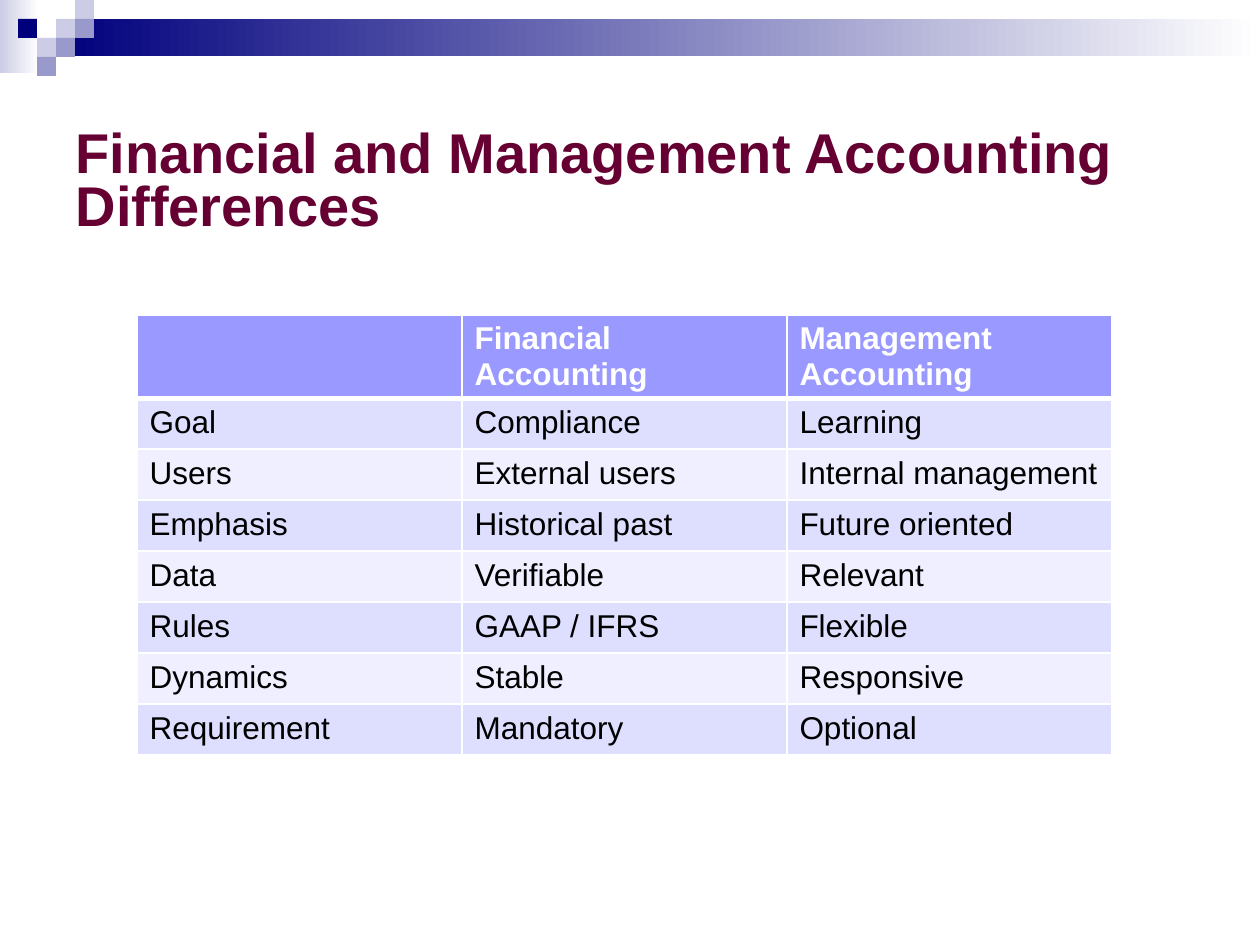
import pptx
import pptx.util
import pptx.dml.color
import pptx.enum.shapes
import pptx.enum.text
import pptx.oxml
import pptx.oxml.ns

RGB = pptx.dml.color.RGBColor
NAVY = RGB(0x00, 0x00, 0x7D)
LAVENDER = RGB(0xCC, 0xCC, 0xE6)
PERIWINKLE = RGB(0x99, 0x99, 0xCC)
WHITE = RGB(0xFF, 0xFF, 0xFF)
BLACK = RGB(0x00, 0x00, 0x00)
MAROON = RGB(0x66, 0x00, 0x33)
HEADER = RGB(0x99, 0x99, 0xFF)
BAND_DARK = RGB(0xDE, 0xDE, 0xFF)
BAND_LIGHT = RGB(0xEF, 0xEF, 0xFF)

PX = 914400 / 126
FONT = "Arial"


def box(left, top, width, height, color, fade=False):
    """Add a borderless rectangle, solid or fading to white on the right."""
    lengths = [round(n * PX) for n in (left, top, width, height)]
    sp = s.shapes.add_shape(pptx.enum.shapes.MSO_SHAPE.RECTANGLE, *lengths)
    sp.shadow.inherit = False
    sp.line.fill.background()
    if fade:
        sp.fill.gradient()
        sp.fill.gradient_angle = 0
        for stop, stop_color in zip(sp.fill.gradient_stops, (color, WHITE)):
            stop.color.rgb = stop_color
    else:
        sp.fill.solid()
        sp.fill.fore_color.rgb = color


def set_borders(cell, bottom_width):
    tcPr = cell._tc.get_or_add_tcPr()
    for i, side in enumerate("LRTB"):
        width = pptx.util.Pt(bottom_width if side == "B" else 1)
        tcPr.insert(i, pptx.oxml.parse_xml(
            f'<a:ln{side} {pptx.oxml.ns.nsdecls("a")} w="{width}"><a:solidFill>'
            f'<a:srgbClr val="{WHITE}"/></a:solidFill></a:ln{side}>'))


prs = pptx.Presentation()
prs.slide_width = round(1260 * PX)
prs.slide_height = round(945 * PX)
s = prs.slides.add_slide(prs.slide_layouts[5])

# Top band and its mosaic of squares
box(0, 0, 39, 73, LAVENDER, fade=True)
box(57, 19, 1203, 37, NAVY, fade=True)
SQUARE = 19
mosaic = [
    (3, 1, LAVENDER), (4, 0, LAVENDER), (4, 1, PERIWINKLE),
    (2, 2, LAVENDER), (1, 1, NAVY), (3, 2, PERIWINKLE), (2, 3, PERIWINKLE),
]
for col, row, color in mosaic:
    box(col * SQUARE - 1, row * SQUARE, SQUARE, SQUARE, color)

# Title
title = s.shapes.title
title.left, title.top = round(63 * PX), round(116 * PX)
title.width, title.height = round(1134 * PX), round(136 * PX)
tf = title.text_frame
tf.text = "Financial and Management Accounting Differences"
tf.word_wrap = True
tf.auto_size = pptx.enum.text.MSO_AUTO_SIZE.NONE
tf.vertical_anchor = pptx.enum.text.MSO_ANCHOR.MIDDLE
p = tf.paragraphs[0]
p.alignment = pptx.enum.text.PP_ALIGN.LEFT
p.line_spacing = 0.8
r = p.runs[0]
r.font.name = FONT
r.font.size = pptx.util.Pt(32)
r.font.bold = True
r.font.color.rgb = MAROON

# Comparison table
rows = [
    ("", "Financial Accounting", "Management Accounting"),
    ("Goal", "Compliance", "Learning"),
    ("Users", "External users", "Internal management"),
    ("Emphasis", "Historical past", "Future oriented"),
    ("Data", "Verifiable", "Relevant"),
    ("Rules", "GAAP / IFRS", "Flexible"),
    ("Dynamics", "Stable", "Responsive"),
    ("Requirement", "Mandatory", "Optional"),
]
COL_WIDTH, ROW_HEIGHT = 325, 51
table = s.shapes.add_table(
    len(rows), 3, round(137 * PX), round(315 * PX),
    round(3 * COL_WIDTH * PX), round(len(rows) * ROW_HEIGHT * PX)).table
for i, texts in enumerate(rows):
    is_header = i == 0
    fill = HEADER if is_header else BAND_DARK if i % 2 else BAND_LIGHT
    for j, text in enumerate(texts):
        cell = table.cell(i, j)
        cell.fill.solid()
        cell.fill.fore_color.rgb = fill
        set_borders(cell, 3 if is_header else 1)
        p = cell.text_frame.paragraphs[0]
        p.text = text
        for r in p.runs:
            r.font.name = FONT
            r.font.size = pptx.util.Pt(18)
            r.font.bold = is_header
            r.font.color.rgb = WHITE if is_header else BLACK

prs.save("out.pptx")
